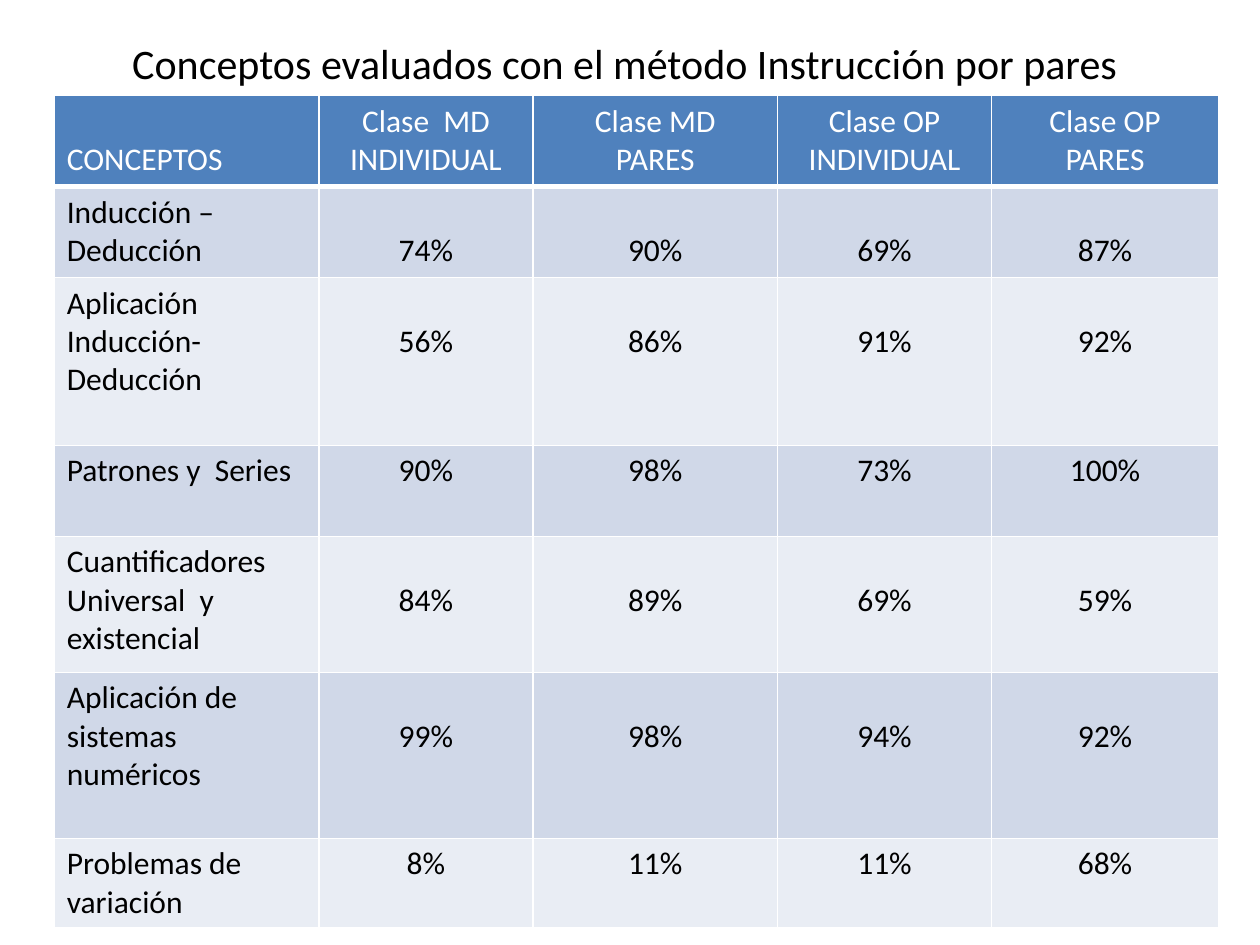
from dataclasses import dataclass
from lxml.etree import SubElement
from pptx import Presentation
from pptx.dml.color import RGBColor
from pptx.enum.text import MSO_ANCHOR, MSO_AUTO_SIZE, PP_ALIGN
from pptx.oxml.ns import qn
from pptx.util import Pt


@dataclass(frozen=True)
class Theme:
    font: str = "Calibri"
    ink: str = "000000"
    paper: str = "FFFFFF"
    head: str = "4F81BD"
    bands: tuple = ("D0D8E8", "E9EDF4")
    title: float = 24
    body: float = 18
    line: float = 22
    inset: float = 3.6
    rule: float = 1
    thick: float = 3


TITLE = "Conceptos evaluados con el método Instrucción por pares"
HEADS = [
    "CONCEPTOS",
    "Clase  MD\nINDIVIDUAL",
    "Clase MD\nPARES",
    "Clase OP\nINDIVIDUAL",
    "Clase OP\nPARES",
]
ROWS = [
    ("Inducción – Deducción", (74, 90, 69, 87), 1, 52),
    ("Aplicación\nInducción-\nDeducción", (56, 86, 91, 92), 1, 96),
    ("Patrones y  Series", (90, 98, 73, 100), 0, 52),
    ("Cuantificadores Universal  y existencial", (84, 89, 69, 59), 1, 77.5),
    ("Aplicación de sistemas numéricos", (99, 98, 94, 92), 1, 95),
    ("Problemas de variación", (8, 11, 11, 68), 0, 51),
]
WIDTHS = [151.2, 122.4, 139.7, 122.4, 129.6]
TOP = 52


def assign(item, form):
    for name, value in form.items():
        setattr(item, name, value)


class Deck:
    def __init__(self, theme):
        self.theme = theme
        self.show = Presentation()
        assign(self.show, {"slide_width": Pt(720), "slide_height": Pt(540)})
        self.slide = self.show.slides.add_slide(self.show.slide_layouts[5])

    def style(self, frame, size, color, align):
        for para in frame.paragraphs:
            para.alignment = align
            for run in para.runs:
                assign(run.font, {"name": self.theme.font, "size": Pt(size), "bold": False})
                run.font.color.rgb = RGBColor.from_string(color)

    def title(self, text, left, top, width, height):
        shape = self.slide.shapes.title
        assign(shape, {"left": Pt(left), "top": Pt(top),
                       "width": Pt(width), "height": Pt(height)})
        frame = shape.text_frame
        frame.text = text
        assign(frame, {"auto_size": MSO_AUTO_SIZE.NONE, "word_wrap": True,
                       "vertical_anchor": MSO_ANCHOR.MIDDLE,
                       "margin_top": Pt(14), "margin_bottom": 0,
                       "margin_left": Pt(7), "margin_right": Pt(13)})
        self.style(frame, self.theme.title, self.theme.ink, PP_ALIGN.CENTER)

    def edge(self, cell, low):
        props = cell._tc.get_or_add_tcPr()
        sides = {"lnL": self.theme.rule, "lnR": self.theme.rule,
                 "lnT": self.theme.rule, "lnB": low}
        for spot, (side, width) in enumerate(sides.items()):
            line = SubElement(props, qn(f"a:{side}"), w=str(Pt(width)))
            fill = SubElement(line, qn("a:solidFill"))
            SubElement(fill, qn("a:srgbClr"), val=self.theme.paper)
            props.insert(spot, line)

    def cell(self, cell, text, fill, color, align, drop, low):
        cell.text = text
        cell.margin_top = Pt(self.theme.inset + drop * self.theme.line)
        cell.fill.solid()
        cell.fill.fore_color.rgb = RGBColor.from_string(fill)
        self.style(cell.text_frame, self.theme.body, color, align)
        self.edge(cell, low)

    def table(self, heads, rows, left, top, widths, first):
        look = self.theme
        highs = [first] + [row[3] for row in rows]
        grid = self.slide.shapes.add_table(
            len(highs), len(widths), Pt(left), Pt(top),
            Pt(sum(widths)), Pt(sum(highs))).table
        for col, width in zip(grid.columns, widths):
            col.width = Pt(width)
        for row, high in zip(grid.rows, highs):
            row.height = Pt(high)
        for x, text in enumerate(heads):
            align = PP_ALIGN.CENTER if x else PP_ALIGN.LEFT
            self.cell(grid.cell(0, x), text, look.head, look.paper, align,
                      0 if x else 1, look.thick)
        for y, (label, marks, drop, _) in enumerate(rows, 1):
            fill = look.bands[(y - 1) % 2]
            self.cell(grid.cell(y, 0), label, fill, look.ink,
                      PP_ALIGN.LEFT, 0, look.rule)
            for x, mark in enumerate(marks, 1):
                self.cell(grid.cell(y, x), f"{mark}%", fill, look.ink,
                          PP_ALIGN.CENTER, drop, look.rule)


def main():
    deck = Deck(Theme())
    deck.title(TITLE, 36, 15, 648, 28)
    deck.table(HEADS, ROWS, 31, 54.7, WIDTHS, TOP)
    deck.show.save("out.pptx")


if __name__ == "__main__":
    main()
